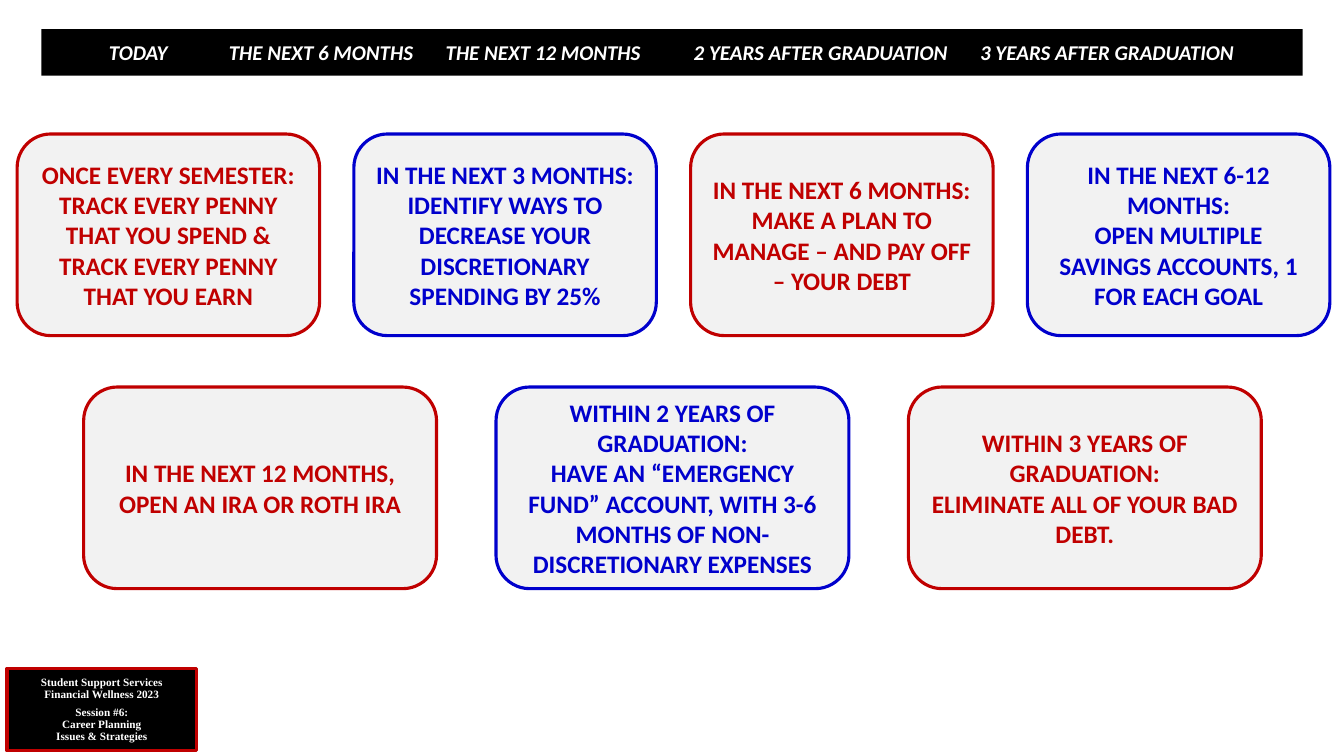
"""Build a slide of financial goals laid out along a timeline."""
from dataclasses import dataclass

from lxml import etree
from pptx import Presentation
from pptx import util as u
from pptx.dml import color
from pptx.enum import shapes, text
from pptx.oxml import ns

COLORS = {
    "red": "C00000",
    "blue": "0000CC",
    "black": "000000",
    "white": "FFFFFF",
    "panel": "F2F2F2",
}


@dataclass(frozen=True)
class TextStyle:
    font: str
    size: float
    color: str
    italic: bool = False
    line_spacing: float = 1.0
    alignment: text.PP_ALIGN = text.PP_ALIGN.CENTER


@dataclass(frozen=True)
class GoalRow:
    left: float
    top: float
    width: float
    pitch: float
    goals: tuple[tuple[str, ...], ...]


GOAL_HEIGHT = 2.0
GOAL_ROWS = (
    GoalRow(0.17, 1.33, 3.0, 3.34, (
        ("ONCE EVERY SEMESTER:",
         "TRACK EVERY PENNY THAT YOU SPEND & TRACK EVERY PENNY THAT YOU EARN"),
        ("IN THE NEXT 3 MONTHS:",
         "IDENTIFY WAYS TO DECREASE YOUR DISCRETIONARY SPENDING BY 25%"),
        ("IN THE NEXT 6 MONTHS:",
         "MAKE A PLAN TO MANAGE – AND PAY OFF – YOUR DEBT"),
        ("IN THE NEXT 6-12 MONTHS:",
         "OPEN MULTIPLE SAVINGS ACCOUNTS, 1 FOR EACH GOAL"),
    )),
    GoalRow(0.83, 3.84, 3.5, 4.09, (
        ("IN THE NEXT 12 MONTHS, OPEN AN IRA OR ROTH IRA",),
        ("WITHIN 2 YEARS OF GRADUATION:",
         "HAVE AN “EMERGENCY FUND” ACCOUNT, WITH 3-6 MONTHS OF "
         "NON-DISCRETIONARY EXPENSES"),
        ("WITHIN 3 YEARS OF GRADUATION:",
         "ELIMINATE ALL OF YOUR BAD DEBT."),
    )),
)
PERIODS = ("TODAY", "THE NEXT 6 MONTHS", "THE NEXT 12 MONTHS",
           "2 YEARS AFTER GRADUATION", "3 YEARS AFTER GRADUATION")
PERIOD_INDENT = 0.67
PERIOD_TABS = (1.19, 3.34, 5.8, 8.64)
SESSION_LINES = ("Student Support Services", "Financial Wellness 2023",
                 "Session #6:\vCareer Planning", "Issues & Strategies")


def rgb(name: str) -> color.RGBColor:
    return color.RGBColor.from_string(COLORS[name])


def add_box(slide, kind: shapes.MSO_SHAPE, left: float, top: float,
            width: float, height: float, fill: str, line: str | None = None):
    shape = slide.shapes.add_shape(
        kind, u.Inches(left), u.Inches(top), u.Inches(width), u.Inches(height))
    shape.shadow.inherit = False
    shape.fill.solid()
    shape.fill.fore_color.rgb = rgb(fill)
    if line:
        shape.line.color.rgb = rgb(line)
        shape.line.width = u.Pt(2.25)
    else:
        shape.line.fill.background()
    return shape


def add_tabs(paragraph, positions: tuple[float, ...]) -> None:
    properties = paragraph._p.get_or_add_pPr()
    tab_list = etree.SubElement(properties, ns.qn("a:tabLst"))
    for position in positions:
        etree.SubElement(tab_list, ns.qn("a:tab"),
                         pos=str(u.Inches(position)), algn="l")


def write(shape, lines: tuple[str, ...], style: TextStyle,
          tabs: tuple[float, ...] = ()) -> None:
    frame = shape.text_frame
    frame.word_wrap = True
    frame.vertical_anchor = text.MSO_ANCHOR.MIDDLE
    for index, line in enumerate(lines):
        paragraph = frame.add_paragraph() if index else frame.paragraphs[0]
        paragraph.text = line
        paragraph.alignment = style.alignment
        paragraph.line_spacing = style.line_spacing
        if tabs:
            add_tabs(paragraph, tabs)
        font = paragraph.font
        font.name = style.font
        font.size = u.Pt(style.size)
        font.bold = True
        font.italic = style.italic
        font.color.rgb = rgb(style.color)


def add_session_label(slide) -> None:
    label = add_box(slide, shapes.MSO_SHAPE.RECTANGLE,
                    0.07, 6.63, 1.88, 0.82, "black", "red")
    write(label, SESSION_LINES,
          TextStyle("Times New Roman", 8, "white", line_spacing=0.9))
    label.text_frame.paragraphs[2].space_before = u.Pt(4)


def add_timeline(slide) -> None:
    banner = add_box(slide, shapes.MSO_SHAPE.RECTANGLE,
                     0.41, 0.29, 12.51, 0.46, "black")
    banner.text_frame.margin_left = u.Inches(PERIOD_INDENT)
    style = TextStyle("Calibri", 15, "white", italic=True,
                      alignment=text.PP_ALIGN.LEFT)
    write(banner, ("\t".join(PERIODS),), style, PERIOD_TABS)


def add_goals(slide, row: GoalRow) -> None:
    for index, lines in enumerate(row.goals):
        accent = ("red", "blue")[index % 2]
        goal = add_box(slide, shapes.MSO_SHAPE.ROUNDED_RECTANGLE,
                       row.left + index * row.pitch, row.top,
                       row.width, GOAL_HEIGHT, "panel", accent)
        write(goal, lines, TextStyle("Calibri", 18, accent))


def main() -> None:
    presentation = Presentation()
    presentation.slide_width = u.Inches(13.33)
    presentation.slide_height = u.Inches(7.5)
    slide = presentation.slides.add_slide(presentation.slide_layouts[6])
    add_session_label(slide)
    add_timeline(slide)
    for row in GOAL_ROWS:
        add_goals(slide, row)
    presentation.save("out.pptx")


if __name__ == "__main__":
    main()
